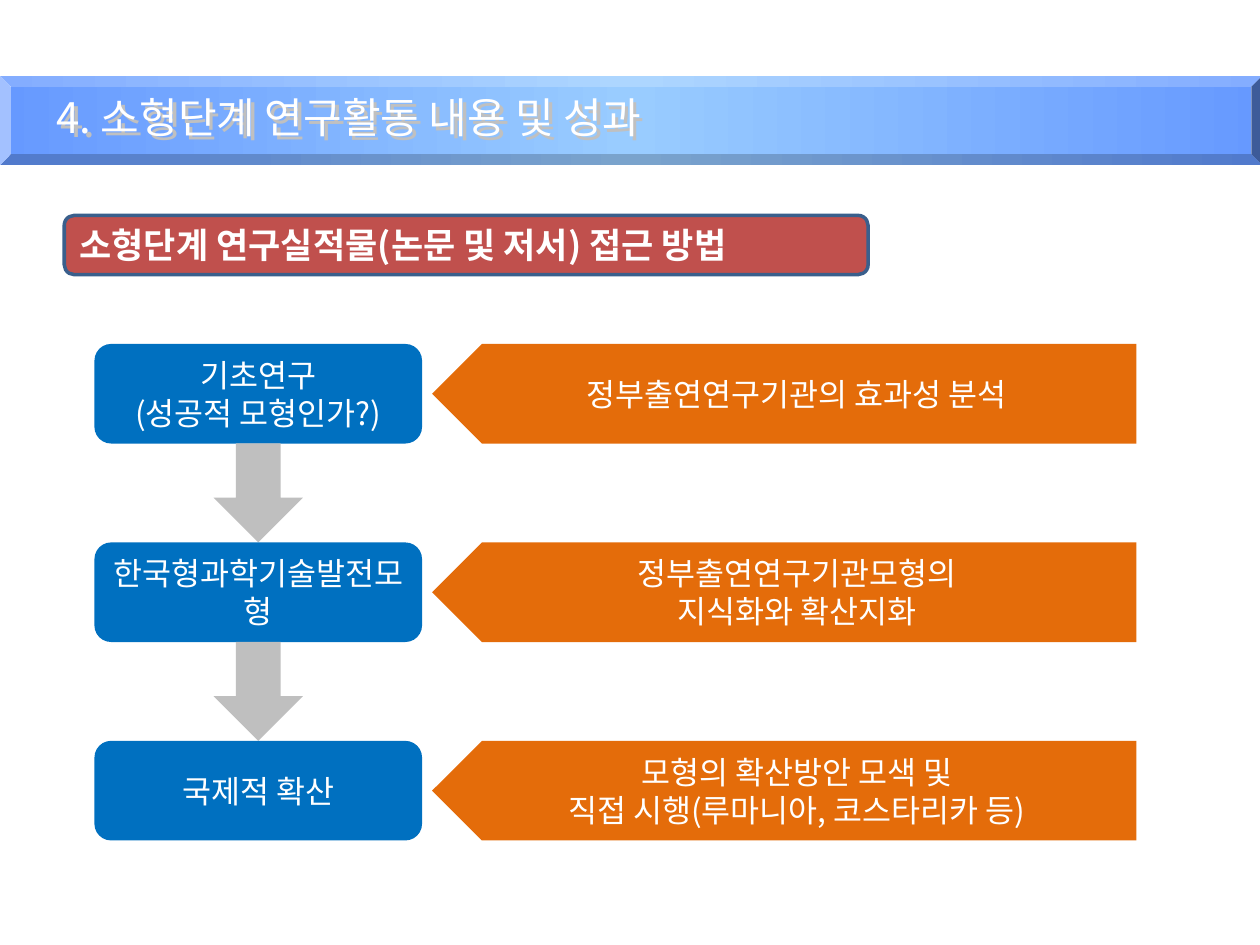
from copy import deepcopy

from lxml import etree
from pptx import Presentation
from pptx.dml.color import RGBColor
from pptx.enum import shapes, text
from pptx.oxml import ns
from pptx.util import Inches, Pt

FONT = "Noto Sans CJK KR"
WHITE = RGBColor(0xFF, 0xFF, 0xFF)
BLUE = RGBColor(0x00, 0x70, 0xC0)
ORANGE = RGBColor(0xE4, 0x6C, 0x0A)
GRAY = RGBColor(0xBF, 0xBF, 0xBF)
RED = RGBColor(0xC0, 0x50, 0x4D)
NAVY = RGBColor(0x3A, 0x5F, 0x8C)
BAND_EDGE = RGBColor(0x66, 0x99, 0xFF)
BAND_CENTER = RGBColor(0x99, 0xCC, 0xFF)

ROW_TOP, ROW_PITCH, ROW_HEIGHT = 2.73, 1.575, 0.79
STEP_LEFT, STEP_WIDTH = 0.75, 2.6
DETAIL_LEFT, DETAIL_WIDTH = 3.43, 5.59
ARROW_WIDTH = 0.71

STEPS = [
    (["기초연구", "(성공적 모형인가?)"], ["정부출연연구기관의 효과성 분석"]),
    (["한국형과학기술발전모형"], ["정부출연연구기관모형의", "지식화와 확산지화"]),
    (["국제적 확산"], ["모형의 확산방안 모색 및", "직접 시행(루마니아, 코스타리카 등)"]),
]


def add_block(slide, kind, left, top, width, height, color=None):
    shape = slide.shapes.add_shape(
        kind, Inches(left), Inches(top), Inches(width), Inches(height))
    shape.shadow.inherit = False
    shape.line.fill.background()
    if color is not None:
        shape.fill.solid()
        shape.fill.fore_color.rgb = color
    return shape


def write_lines(shape, lines, size=18, bold=False, align=text.PP_ALIGN.CENTER,
                anchor=text.MSO_ANCHOR.MIDDLE):
    frame = shape.text_frame
    frame.word_wrap = True
    frame.vertical_anchor = anchor
    for index, line in enumerate(lines):
        paragraph = frame.add_paragraph() if index else frame.paragraphs[0]
        paragraph.alignment = align
        run = paragraph.add_run()
        run.text = line
        run.font.size = Pt(size)
        run.font.bold = bold
        run.font.color.rgb = WHITE
        run.font.name = FONT
        east_asian = etree.SubElement(run.font._element, ns.qn("a:ea"))
        east_asian.set("typeface", FONT)


def add_text_shadow(shape):
    effects = etree.SubElement(shape._element.spPr, ns.qn("a:effectLst"))
    shadow = etree.SubElement(effects, ns.qn("a:outerShdw"),
                              dist=str(Inches(0.04)), dir="2700000")
    etree.SubElement(shadow, ns.qn("a:srgbClr"), val="C0C0C0")


def fill_band(shape):
    shape.fill.gradient()
    shape.fill.gradient_angle = 0
    stop_list = shape._element.spPr.find(".//" + ns.qn("a:gsLst"))
    stop_list.append(deepcopy(stop_list[0]))
    colors = (BAND_EDGE, BAND_CENTER, BAND_EDGE)
    for index, (stop, color) in enumerate(zip(shape.fill.gradient_stops, colors)):
        stop.position = index / 2
        stop.color.rgb = color


def add_title(slide):
    band = add_block(slide, shapes.MSO_SHAPE.BEVEL, 0, 0.6, 10.02, 0.71)
    band.adjustments[0] = 0.125
    fill_band(band)
    title = slide.shapes.add_textbox(
        Inches(0.35), Inches(0.68), Inches(7.17), Inches(0.5))
    write_lines(title, ["4. 소형단계 연구활동 내용 및 성과"], size=24,
                align=text.PP_ALIGN.LEFT, anchor=text.MSO_ANCHOR.TOP)
    add_text_shadow(title)


def add_heading(slide):
    heading = add_block(
        slide, shapes.MSO_SHAPE.ROUNDED_RECTANGLE, 0.51, 1.71, 6.38, 0.47, RED)
    heading.line.color.rgb = NAVY
    heading.line.width = Pt(2)
    write_lines(heading, ["소형단계 연구실적물(논문 및 저서) 접근 방법"],
                size=20, bold=True, align=text.PP_ALIGN.LEFT)


def add_step(slide, top, lines):
    step = add_block(slide, shapes.MSO_SHAPE.ROUNDED_RECTANGLE,
                     STEP_LEFT, top, STEP_WIDTH, ROW_HEIGHT, BLUE)
    write_lines(step, lines)


def add_detail(slide, top, lines):
    detail = add_block(slide, shapes.MSO_SHAPE.PENTAGON,
                       DETAIL_LEFT, top, DETAIL_WIDTH, ROW_HEIGHT, ORANGE)
    detail._element.spPr.find(ns.qn("a:xfrm")).set("flipH", "1")
    write_lines(detail, lines)


def add_down_arrow(slide, top):
    left = STEP_LEFT + (STEP_WIDTH - ARROW_WIDTH) / 2
    add_block(slide, shapes.MSO_SHAPE.DOWN_ARROW, left, top,
              ARROW_WIDTH, ROW_PITCH - ROW_HEIGHT, GRAY)


def main():
    presentation = Presentation()
    presentation.slide_width = Inches(10)
    presentation.slide_height = Inches(7.5)
    slide = presentation.slides.add_slide(presentation.slide_layouts[6])
    for index, (step_lines, detail_lines) in enumerate(STEPS):
        top = ROW_TOP + index * ROW_PITCH
        add_step(slide, top, step_lines)
        add_detail(slide, top, detail_lines)
        if index < len(STEPS) - 1:
            add_down_arrow(slide, top + ROW_HEIGHT)
    add_title(slide)
    add_heading(slide)
    presentation.save("out.pptx")


if __name__ == "__main__":
    main()
